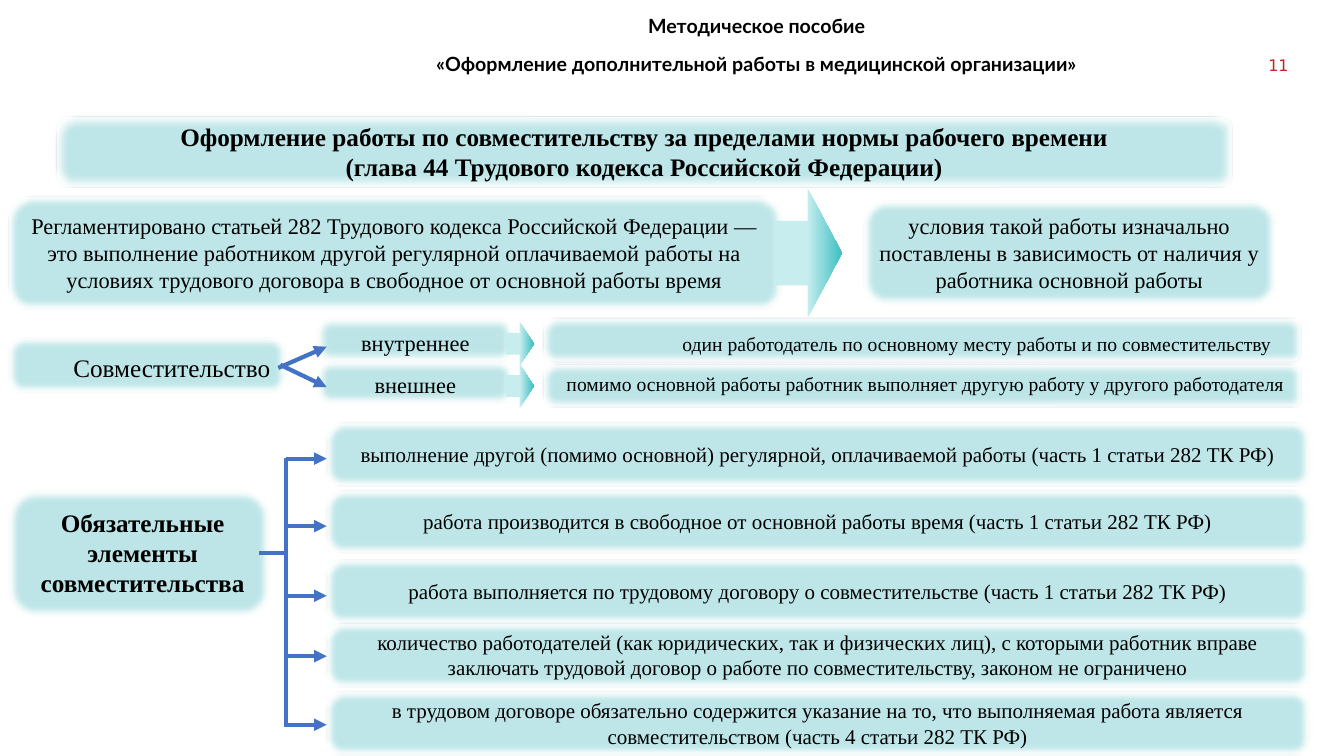
import pptx
import pptx.dml.color
import pptx.enum.dml
import pptx.enum.shapes
import pptx.enum.text
import pptx.oxml
import pptx.oxml.ns
import pptx.util

PX = 9144  # EMU in one px, 100 px to the inch
SERIF, SANS, NUMERALS = "Times New Roman", "Lato", "DejaVu Sans"
BLACK, RED, BLUE, TEAL, NAVY = "000000", "CA2324", "4472C4", "BEE6E8", "1E3256"
ARROW_LIGHT, ARROW_DARK = "C7EDEE", "3BC0C3"
SOFT_EDGE = 63500

# Content
HEADER = ["Методическое пособие",
          "«Оформление дополнительной работы в медицинской организации»"]
PAGE_NUMBER = ["11"]
TITLE = ["Оформление работы по совместительству за пределами нормы рабочего времени",
         "(глава 44 Трудового кодекса Российской Федерации)"]
DEFINITION = ["Регламентировано статьей 282 Трудового кодекса Российской Федерации — это "
              "выполнение работником другой регулярной оплачиваемой работы на условиях "
              "трудового договора в свободное от основной работы время"]
CONDITION = ["условия такой работы изначально поставлены в зависимость от наличия у "
             "работника основной работы"]
KINDS_LABEL = ["Совместительство"]
# name, box top, description box top, description left and top, line start
KINDS = [
    ("внутреннее", 316, 316, 667, 324, (276, 365),
     "один работодатель по основному месту работы и по совместительству"),
    ("внешнее", 358, 361, 552, 364, (278, 362),
     "помимо основной работы работник выполняет другую работу у другого работодателя"),
]
ELEMENTS_LABEL = ["Обязательные элементы совместительства"]
ELEMENTS = [
    (419, "выполнение другой (помимо основной) регулярной, оплачиваемой работы "
          "(часть 1 статьи 282 ТК РФ)"),
    (486, "работа производится в свободное от основной работы время "
          "(часть 1 статьи 282 ТК РФ)"),
    (555, "работа выполняется по трудовому договору о совместительстве "
          "(часть 1 статьи 282 ТК РФ)"),
    (618, "количество работодателей (как юридических, так и физических лиц), с которыми "
          "работник вправе заключать трудовой договор о работе по совместительству, "
          "законом не ограничено"),
    (686, "в трудовом договоре обязательно содержится указание на то, что выполняемая "
          "работа является совместительством (часть 4 статьи 282 ТК РФ)"),
]
SLIDE_WIDTH, SLIDE_HEIGHT = 1333, 750

presentation = pptx.Presentation()
presentation.slide_width = SLIDE_WIDTH * PX
presentation.slide_height = SLIDE_HEIGHT * PX
slide = presentation.slides.add_slide(presentation.slide_layouts[6])
SHAPES = pptx.enum.shapes.MSO_SHAPE
ALIGN = pptx.enum.text.PP_ALIGN


def color(value):
    return pptx.dml.color.RGBColor.from_string(value)


def emu(*lengths):
    return [length * PX for length in lengths]


def write(shape, lines, size, font=SERIF, bold=False, ink=BLACK, align=ALIGN.CENTER,
          spacing=None, after=None, indent=0):
    text_frame = shape.text_frame
    text_frame.word_wrap = True
    text_frame.text = "\n".join(lines)
    for paragraph in text_frame.paragraphs:
        paragraph.alignment = align
        if spacing:
            paragraph.line_spacing = spacing
        if after:
            paragraph.space_after = pptx.util.Pt(after)
        if indent:
            paragraph._p.get_or_add_pPr().set("indent", str(indent * PX))
        for run in paragraph.runs:
            run.font.name = font
            run.font.size = pptx.util.Pt(size)
            run.font.bold = bold
            run.font.color.rgb = color(ink)


def add_box(left, top, width, height, lines=(), size=16, **style):
    shape = slide.shapes.add_shape(SHAPES.ROUNDED_RECTANGLE, *emu(left, top, width, height))
    shape.fill.solid()
    shape.fill.fore_color.rgb = color(TEAL)
    shape.line.color.rgb = color(NAVY)
    shape.line.width = pptx.util.Pt(1)
    shape.shadow.inherit = False
    effects = shape._element.spPr.find(pptx.oxml.ns.qn("a:effectLst"))
    effects.append(pptx.oxml.parse_xml(
        f'<a:softEdge {pptx.oxml.ns.nsdecls("a")} rad="{SOFT_EDGE}"/>'))
    if lines:
        shape.text_frame.vertical_anchor = pptx.enum.text.MSO_ANCHOR.MIDDLE
        write(shape, lines, size, **style)


def add_text(left, top, width, height, lines, size, **style):
    box = slide.shapes.add_textbox(*emu(left, top, width, height))
    write(box, lines, size, **style)
    return box


def add_block_arrow(left, top, width, height):
    arrow = slide.shapes.add_shape(SHAPES.DOWN_ARROW, *emu(left, top, width, height))
    arrow.rotation = 270
    arrow.shadow.inherit = False
    arrow.line.fill.background()
    arrow.fill.gradient()
    arrow.fill.gradient_angle = 270
    stops = ((0.5, ARROW_LIGHT), (1, ARROW_DARK))
    for stop, (position, tint) in zip(arrow.fill.gradient_stops, stops):
        stop.position = position
        stop.color.rgb = color(tint)


def add_line(start, end, head=True):
    line = slide.shapes.add_connector(
        pptx.enum.shapes.MSO_CONNECTOR.STRAIGHT, *emu(*start, *end))
    line.line.color.rgb = color(BLUE)
    line.line.width = pptx.util.Pt(3)
    namespace = pptx.oxml.ns.nsdecls("a")
    if head:
        line.line._get_or_add_ln().append(
            pptx.oxml.parse_xml(f'<a:tailEnd {namespace} type="triangle"/>'))
    line._element.spPr.append(pptx.oxml.parse_xml(f"<a:effectLst {namespace}/>"))


# Header and page number
number = add_text(1247, 55, 31, 24, PAGE_NUMBER, 11.4, font=NUMERALS, ink=RED,
                  align=ALIGN.RIGHT)
frame = number.text_frame
frame.margin_left = frame.margin_right = frame.margin_top = frame.margin_bottom = 0
add_text(309, 9, 883, 71, HEADER, 14, font=SANS, bold=True, after=10)

# Title, definition and condition
add_box(56, 115, 1166, 70, TITLE, 18, bold=True)
add_box(856, 199, 409, 103, CONDITION)
add_box(8, 195, 766, 111, DEFINITION)
add_block_arrow(737, 217, 128, 68)

# Two kinds of secondary employment
add_box(8, 335, 276, 55, KINDS_LABEL, 18, spacing=1.15, after=10, indent=49)
for name, top, wide_top, text_left, text_top, start, description in KINDS:
    add_box(315, top, 194, 43, [name], spacing=1.15, after=10)
    add_box(539, wide_top, 751, 43)
    add_text(text_left, text_top, SLIDE_WIDTH - text_left, 34, [description], 14,
             align=ALIGN.LEFT)
    add_block_arrow(494, top + 11, 43, 28)
for kind, end_y in zip(KINDS, (344, 384)):
    add_line(kind[5], (324, end_y))

# Mandatory elements with their bracket
add_box(8, 486, 260, 126)
add_text(26, 498, 231, 101, ELEMENTS_LABEL, 18, bold=True)
BRACKET_X, ELEMENT_LEFT, ELEMENT_HEIGHT = 284, 324, 63
add_line((257, 549), (BRACKET_X, 549), head=False)
add_line((BRACKET_X, 454), (BRACKET_X, 721), head=False)
for top, text in ELEMENTS:
    add_box(ELEMENT_LEFT, top, 974, ELEMENT_HEIGHT, [text], 15)
    arrow_y = top + 36 if top < 600 else top + 33
    add_line((BRACKET_X, arrow_y), (ELEMENT_LEFT, arrow_y))

presentation.save("out.pptx")
